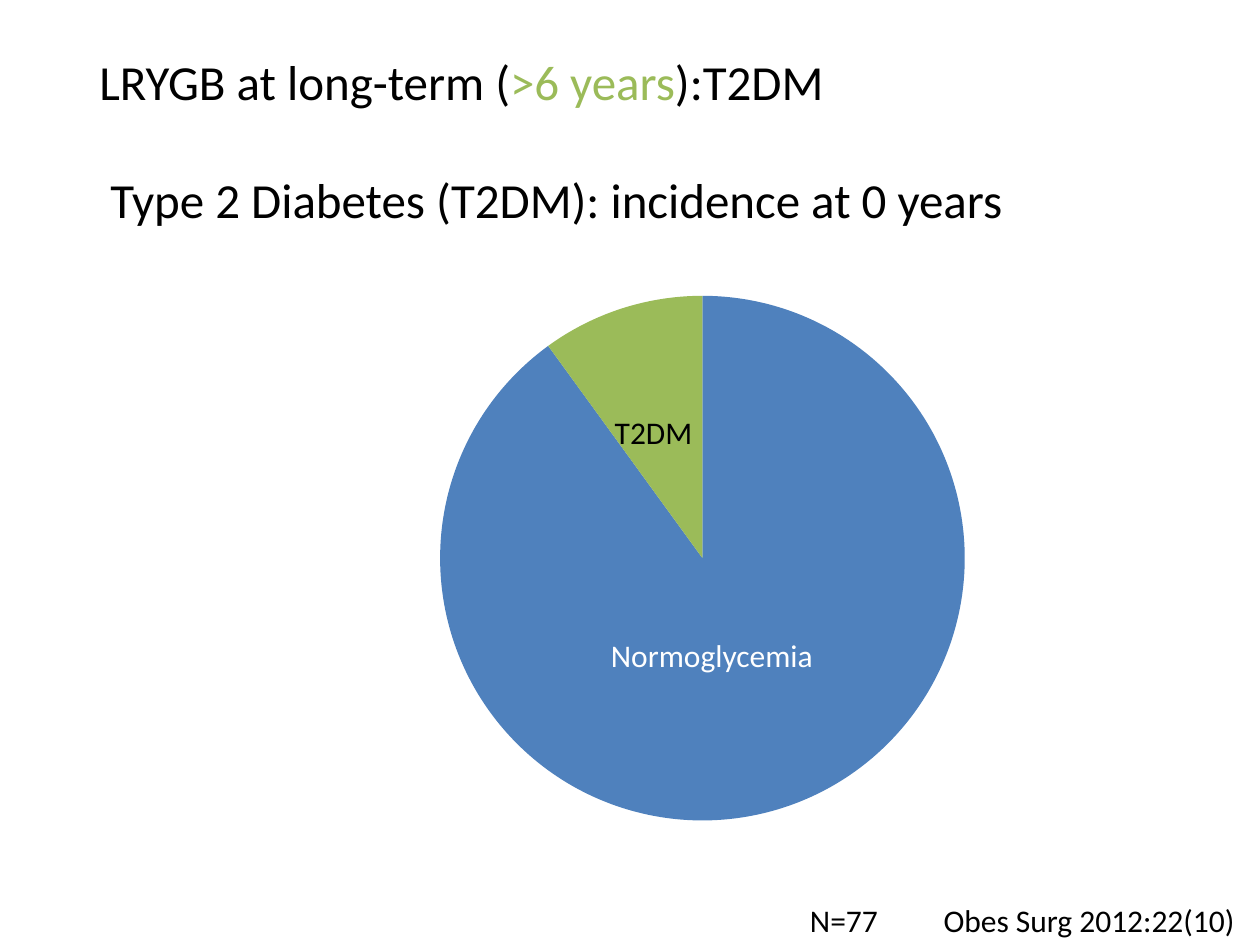
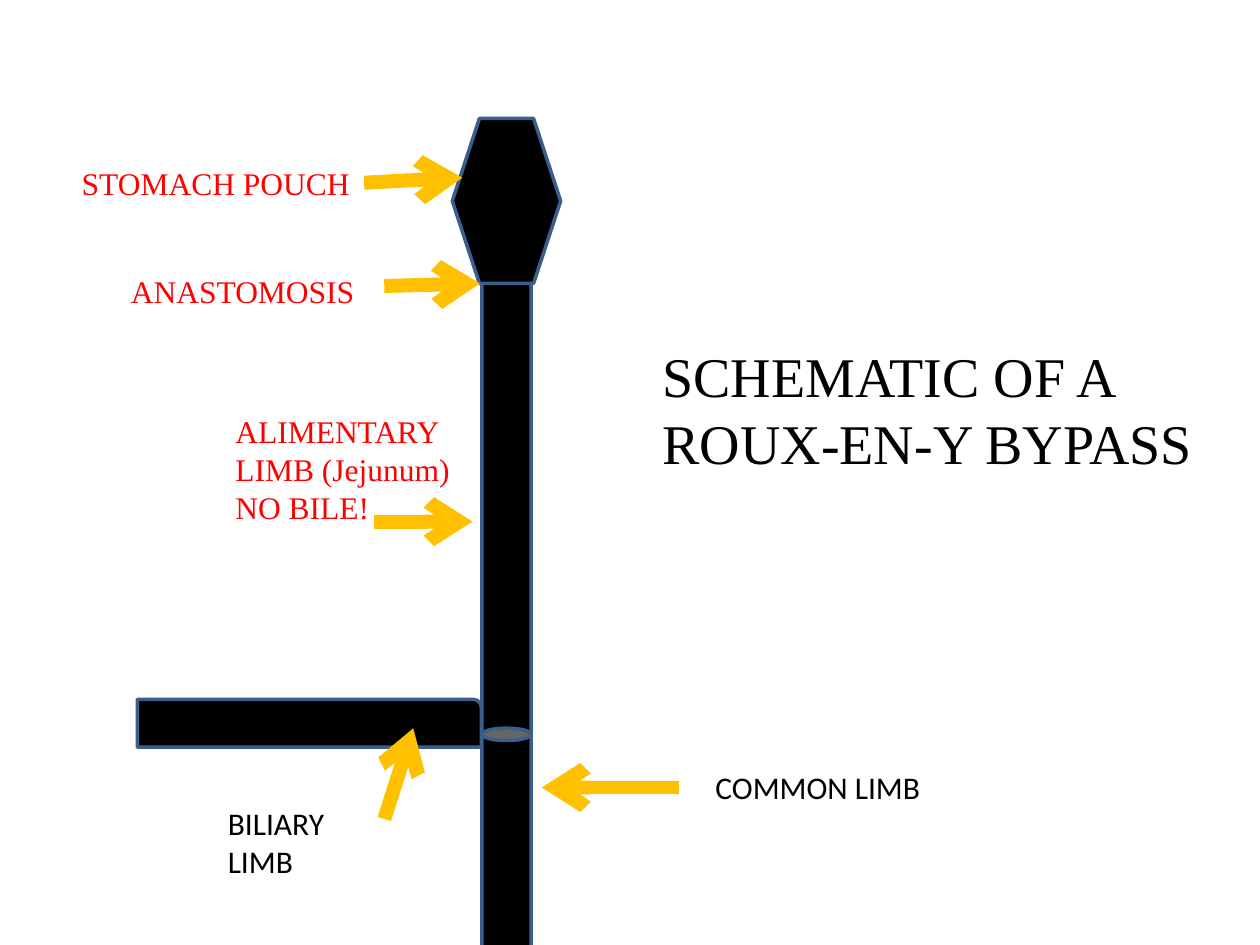
import pptx
import pptx.chart.data
import pptx.dml.color
import pptx.enum.chart
import pptx.enum.shapes
import pptx.enum.text
import pptx.oxml
import pptx.oxml.ns
import pptx.util

SHAPE = pptx.enum.shapes.MSO_SHAPE
Inches, Pt = pptx.util.Inches, pptx.util.Pt

COLORS = {
    "black": "000000", "white": "FFFFFF", "red": "FF0000", "outline": "3A5F8C",
    "arrow": "FFC000", "blue": "4F81BD", "brick": "C0504D", "green": "9BBB59",
    "purple": "8064A2",
}
SANS, SERIF = "Calibri", "Times New Roman"
BODY, HEADING, TITLE = 18, 28, 32

# Slide 1: each heading line is a list of (text, colour)
HEADING_LINES = [
    [("LRYGB at long-term (", "black"), (">6 years", "green"), ("):T2DM", "black")],
    [(" Type 2 Diabetes (T2DM): incidence at 0 years", "black")],
]
HEADING_BOX = (0.69, 0.36, 7.45, 1.51)
PIE_BOX = (2.24, 2.21, 6.67, 4.44)
PIE = [("1", 90, "blue"), ("2", 0, "brick"), ("3", 10, "green"), ("4", 0, "purple")]
PIE_NOTES = [  # text, box, colour
    ("Normoglycemia", (4.75, 5, 1.82, 0.4), "white"),
    ("T2DM", (4.78, 3.23, 0.82, 0.4), "black"),
    ("Obes Surg 2012:22(10)", (7.39, 7.1, 2.54, 0.4), "black"),
    ("N=77", (6.33, 7.1, 0.75, 0.4), "black"),
]

# Slide 2: the alimentary and common limbs share one vertical axis
AXIS_X, LIMB_W = 4.02, 0.39
JOIN_Y = 5.78
ORGANS = [  # preset, left, top, width, height
    (SHAPE.CAN, AXIS_X - LIMB_W / 2, 2.11, LIMB_W, 3.83),    # alimentary limb
    (SHAPE.HEXAGON, AXIS_X - 0.43, 0.94, 0.86, 1.31),        # stomach pouch
    (SHAPE.ROUND_1_RECTANGLE, 1.09, 5.55, 2.73, 0.38),       # biliary limb
]
COMMON_LIMB = (SHAPE.CAN, AXIS_X - LIMB_W / 2, JOIN_Y, LIMB_W, 3.44)
ARROWS = [  # from x, y, to x, y
    (2.89, 1.45, 3.67, 1.41),
    (3.05, 2.27, 3.81, 2.25),
    (2.97, 4.14, 3.75, 4.14),
    (3.05, 6.5, 3.28, JOIN_Y),
]
COMMON_ARROW = (5.39, 6.25, 4.3, 6.25)
LABELS = [  # lines, box, colour, font, size, wrap
    (["STOMACH POUCH"], (0.55, 1.25, 2.35, 0.4), "red", SERIF, BODY, False),
    (["ANASTOMOSIS"], (0.94, 2.11, 1.99, 0.4), "red", SERIF, BODY, False),
    (["ALIMENTARY", "LIMB (Jejunum)", "NO BILE!"], (1.77, 3.22, 1.92, 1.01),
     "red", SERIF, BODY, False),
    (["BILIARY", "LIMB"], (1.71, 6.33, 5, 0.71), "black", SANS, BODY, True),
    (["COMMON LIMB"], (5.58, 6.05, 2.73, 0.4), "black", SANS, BODY, True),
    (["SCHEMATIC OF A", "ROUX-EN-Y BYPASS"], (5.16, 2.66, 4.44, 1.18),
     "black", SERIF, TITLE, False),
]


def rgb(name):
    return pptx.dml.color.RGBColor.from_string(COLORS[name])


def inches(lengths):
    return [Inches(n) for n in lengths]


def add_text(slide, lines, box, font=SANS, size=BODY, wrap=False):
    """Add a text box whose lines are lists of (text, colour) runs."""
    tf = slide.shapes.add_textbox(*inches(box)).text_frame
    tf.word_wrap = wrap
    tf.auto_size = pptx.enum.text.MSO_AUTO_SIZE.SHAPE_TO_FIT_TEXT
    for i, runs in enumerate(lines):
        p = tf.add_paragraph() if i else tf.paragraphs[0]
        p.font.name, p.font.size = font, Pt(size)
        for text, color in runs:
            r = p.add_run()
            r.text = text
            r.font.color.rgb = rgb(color)
    return tf


def add_organ(slide, preset, *box):
    sp = slide.shapes.add_shape(preset, *inches(box))
    sp.shadow.inherit = False
    sp.fill.solid()
    sp.fill.fore_color.rgb = rgb("black")
    sp.line.color.rgb = rgb("outline")
    sp.line.width = Pt(2)


def add_arrow(slide, ends):
    line = slide.shapes.add_connector(
        pptx.enum.shapes.MSO_CONNECTOR.STRAIGHT, *inches(ends))
    line.line.color.rgb = rgb("arrow")
    line.line.width = Pt(8)
    ns = pptx.oxml.ns.nsdecls("a")
    line.line._get_or_add_ln().append(
        pptx.oxml.parse_xml(f'<a:tailEnd {ns} type="arrow"/>'))
    line._element.spPr.append(pptx.oxml.parse_xml(f"<a:effectLst {ns}/>"))


def add_pie(slide):
    data = pptx.chart.data.CategoryChartData()
    data.categories = [category for category, _, _ in PIE]
    data.add_series("Series 1", [value for _, value, _ in PIE])
    chart = slide.shapes.add_chart(
        pptx.enum.chart.XL_CHART_TYPE.PIE, *inches(PIE_BOX), data).chart
    chart.has_title = chart.has_legend = False
    chart.font.name, chart.font.size = SANS, Pt(BODY)
    chart.font.color.rgb = rgb("black")
    plot = chart.plots[0]
    plot.vary_by_categories = True
    for i, (_, _, color) in enumerate(PIE):
        fill = plot.series[0].points[i].format.fill
        fill.solid()
        fill.fore_color.rgb = rgb(color)


def build_incidence(slide):
    tf = add_text(slide, HEADING_LINES, HEADING_BOX, size=HEADING)
    tf.paragraphs[1].space_before = Pt(34)
    add_pie(slide)
    for text, box, color in PIE_NOTES:
        add_text(slide, [[(text, color)]], box)


def build_schematic(slide):
    for organ in ORGANS:
        add_organ(slide, *organ)
    for ends in ARROWS:
        add_arrow(slide, ends)
    add_organ(slide, *COMMON_LIMB)
    add_arrow(slide, COMMON_ARROW)
    for lines, box, color, font, size, wrap in LABELS:
        add_text(slide, [[(text, color)] for text in lines], box, font, size, wrap)


def main():
    prs = pptx.Presentation()
    prs.slide_width, prs.slide_height = Inches(10), Inches(7.5)
    for build in (build_incidence, build_schematic):
        build(prs.slides.add_slide(prs.slide_layouts[6]))
    prs.save("out.pptx")


if __name__ == "__main__":
    main()
